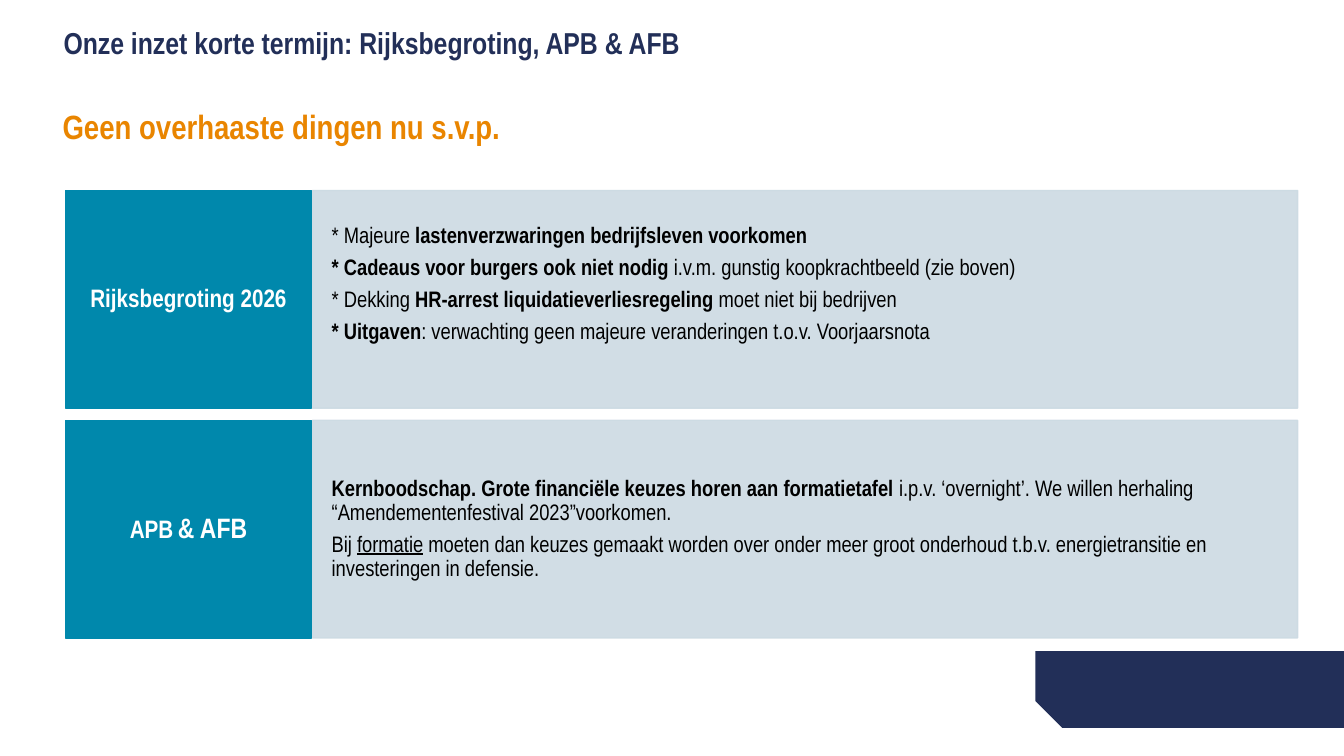
from dataclasses import dataclass

import pptx
import pptx.dml.color
import pptx.enum.shapes
import pptx.enum.text
import pptx.oxml
import pptx.oxml.ns
import pptx.util

Inches = pptx.util.Inches
Pt = pptx.util.Pt
Preset = pptx.enum.shapes.MSO_SHAPE
Align = pptx.enum.text.PP_ALIGN
Anchor = pptx.enum.text.MSO_ANCHOR


@dataclass(frozen=True)
class Theme:
    font: str = "Arial Narrow"
    navy: str = "222F58"
    orange: str = "E98500"
    teal: str = "0088AC"
    pale: str = "CCDAE3"
    white: str = "FFFFFF"
    black: str = "000000"
    title: float = 21.6
    subtitle: float = 24
    label: float = 18
    body: float = 16
    line_spacing: float = 0.9
    paragraph_gap: float = 5.6


THEME = Theme()

# Each run: text, then optional "b" (bold), "u" (underline) and a type size
TOPICS = [
    {
        "label": [("Rijksbegroting 2026", "b")],
        "points": [
            [("* Majeure",), (" lastenverzwaringen bedrijfsleven voorkomen", "b")],
            [("* Cadeaus voor burgers ook niet nodig ", "b"),
             ("i.v.m. gunstig koopkrachtbeeld (zie boven)",)],
            [("* Dekking ",), ("HR-arrest liquidatieverliesregeling ", "b"),
             ("moet niet bij bedrijven",)],
            [("* Uitgaven", "b"),
             (": verwachting geen majeure veranderingen t.o.v. Voorjaarsnota",)],
        ],
        "bottom_inset": 0.4,
    },
    {
        "label": [("APB", "b"), (" ", "b", 14), ("& AFB", "b", 20)],
        "points": [
            [("Kernboodschap. Grote financiële keuzes horen aan formatietafel ", "b"),
             ("i.p.v. ‘overnight’. We willen herhaling "
              "“Amendementenfestival 2023”voorkomen.",)],
            [("Bij ",), ("formatie", "u"),
             (" moeten dan keuzes gemaakt worden over onder meer groot onderhoud "
              "t.b.v. energietransitie en investeringen in defensie.",)],
        ],
        "bottom_inset": 0.1,
    },
]


def rgb(value):
    return pptx.dml.color.RGBColor.from_string(value)


def set_insets(frame, left, top, right, bottom):
    frame.margin_left, frame.margin_top = Inches(left), Inches(top)
    frame.margin_right, frame.margin_bottom = Inches(right), Inches(bottom)


def style_font(font, size, color, bold):
    font.name = THEME.font
    font.size = Pt(size)
    font.color.rgb = rgb(color)
    font.bold = bold


def fill_heading(placeholder, box, text, size, color):
    placeholder.left, placeholder.top, placeholder.width, placeholder.height = map(Inches, box)
    frame = placeholder.text_frame
    frame.text = text
    frame.word_wrap = True
    frame.auto_size = pptx.enum.text.MSO_AUTO_SIZE.NONE
    frame.vertical_anchor = Anchor.TOP
    set_insets(frame, 0, 0, 0.2, 0)
    heading = frame.paragraphs[0]
    heading.alignment = Align.LEFT
    heading.line_spacing = THEME.line_spacing
    heading.space_before = Pt(0)
    style_font(heading.runs[0].font, size, color, True)


def add_block(slide, preset, box, color, opacity=None):
    block = slide.shapes.add_shape(preset, *map(Inches, box))
    block.shadow.inherit = False
    block.fill.solid()
    block.fill.fore_color.rgb = rgb(color)
    block.line.color.rgb = rgb(color)
    block.line.width = Pt(1)
    if opacity is not None:
        # Transparency of both the fill and the outline
        for tint in block.fill._xPr.iter(pptx.oxml.ns.qn("a:srgbClr")):
            alpha = tint.makeelement(pptx.oxml.ns.qn("a:alpha"), {"val": str(opacity * 1000)})
            tint.append(alpha)
    return block


def write_paragraphs(block, paragraphs, insets, align, size, color):
    frame = block.text_frame
    frame.word_wrap = True
    frame.vertical_anchor = Anchor.MIDDLE
    set_insets(frame, *insets)
    for index, pieces in enumerate(paragraphs):
        paragraph = frame.add_paragraph() if index else frame.paragraphs[0]
        paragraph.alignment = align
        paragraph.line_spacing = THEME.line_spacing
        paragraph.space_after = Pt(THEME.paragraph_gap)
        for text, *marks in pieces:
            run = paragraph.add_run()
            run.text = text
            run_size = marks[1] if len(marks) > 1 else size
            style_font(run.font, run_size, color, "b" in marks)
            run.font.underline = "u" in marks


def add_topic(slide, topic, top):
    height = 2.16
    panel = add_block(slide, Preset.RECTANGLE, (3.1, top, 9.77, height), THEME.pale, 90)
    write_paragraphs(panel, topic["points"], (0.19, 0.1, 0.19, topic["bottom_inset"]),
                     Align.LEFT, THEME.body, THEME.black)
    label = add_block(slide, Preset.RECTANGLE, (0.65, top, 2.44, height), THEME.teal)
    write_paragraphs(label, [topic["label"]], (0.13, 0.21, 0.13, 0.21),
                     Align.CENTER, THEME.label, THEME.white)


def add_corner(slide):
    corner = add_block(slide, Preset.SNIP_1_RECTANGLE, (10.27, 6.46, 3.07, 0.76), THEME.navy)
    corner.adjustments[0] = 0.349
    corner.rotation = 180
    corner.line.fill.background()


def main():
    deck = pptx.Presentation()
    deck.slide_width, deck.slide_height = Inches(13.33), Inches(7.5)
    slide = deck.slides.add_slide(deck.slide_layouts[0])

    # Headings
    fill_heading(slide.shapes.title, (0.63, 0.28, 9.64, 0.7),
                 "Onze inzet korte termijn: Rijksbegroting, APB & AFB",
                 THEME.title, THEME.navy)
    fill_heading(slide.placeholders[1], (0.62, 1.1, 5.26, 0.52),
                 "Geen overhaaste dingen nu s.v.p.", THEME.subtitle, THEME.orange)

    # Corner decoration and topic rows
    add_corner(slide)
    for row, topic in enumerate(TOPICS):
        add_topic(slide, topic, 1.89 + row * 2.28)

    deck.save("out.pptx")


if __name__ == "__main__":
    main()
